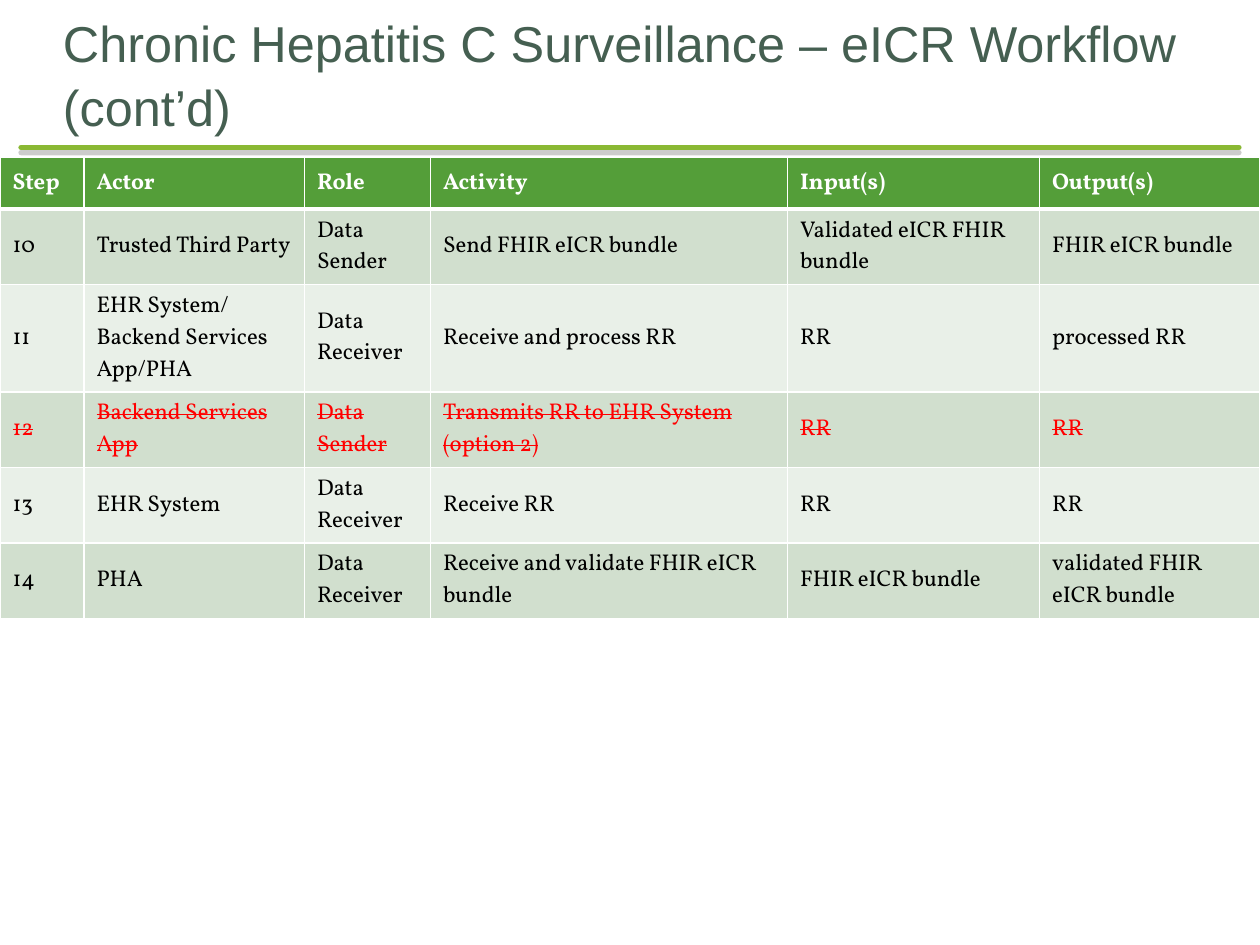
from dataclasses import dataclass

from lxml.etree import SubElement as Sub
from pptx import Presentation
from pptx.dml.color import RGBColor as Rgb
from pptx.enum.shapes import MSO_CONNECTOR as Link
from pptx.enum.text import MSO_ANCHOR as Anchor
from pptx.oxml.ns import qn
from pptx.util import Inches, Pt


@dataclass(frozen=True)
class Theme:
    title: str = "455F51"
    rule: str = "8AB833"
    shade: str = "808080"
    head: str = "549E39"
    bands: tuple = ("D1DFCE", "E9F0E8")
    white: str = "FFFFFF"
    ink: str = "000000"
    struck: str = "FF0000"
    title_font: str = "Arial"
    body_font: str = "Vollkorn"
    title_size: float = 28.8
    body_size: float = 13


# Grid: 120 columns and 750 rows over the slide
COLS, ROWS = 120, 750
WIDTHS = [8, 21, 12, 34, 24, 21]
HEIGHTS = [41, 60, 85, 60, 60, 60]
STRUCK = "12"
STEPS = [
    ["Step", "Actor", "Role", "Activity", "Input(s)", "Output(s)"],
    ["10", "Trusted Third Party", "Data Sender", "Send FHIR eICR bundle",
     "Validated eICR FHIR bundle", "FHIR eICR bundle"],
    ["11", "EHR System/ Backend Services App/PHA", "Data Receiver",
     "Receive and process RR", "RR", "processed RR"],
    [STRUCK, "Backend Services App", "Data Sender",
     "Transmits RR to EHR System (option 2)", "RR", "RR"],
    ["13", "EHR System", "Data Receiver", "Receive RR", "RR", "RR"],
    ["14", "PHA", "Data Receiver", "Receive and validate FHIR eICR bundle",
     "FHIR eICR bundle", "validated FHIR eICR bundle"],
]


class Deck:
    def __init__(self, theme):
        self.theme = theme
        self.prs = Presentation()
        self.prs.slide_width, self.prs.slide_height = Inches(10), Inches(7.5)
        self.slide = self.prs.slides.add_slide(self.prs.slide_layouts[6])

    def across(self, n):
        return round(self.prs.slide_width * n / COLS)

    def down(self, n):
        return round(self.prs.slide_height * n / ROWS)

    def label(self, frame, text, color, struck=False, **form):
        run = frame.paragraphs[0].add_run()
        run.text = text
        for key, value in form.items():
            setattr(run.font, key, value)
        run.font.color.rgb = Rgb.from_string(color)
        if struck:
            run._r.get_or_add_rPr().set("strike", "sngStrike")

    def title(self, text, x, y, w, h):
        box = self.slide.shapes.add_textbox(
            self.across(x), self.down(y), self.across(w), self.down(h))
        frame = box.text_frame
        form = {"word_wrap": True, "vertical_anchor": Anchor.BOTTOM,
                "margin_left": 0, "margin_top": Inches(0.05),
                "margin_right": 0, "margin_bottom": 0}
        for key, value in form.items():
            setattr(frame, key, value)
        frame.paragraphs[0].line_spacing = 1.05
        look = self.theme
        self.label(frame, text, look.title, name=look.title_font,
                   size=Pt(look.title_size))

    def rule(self, x, y, end):
        line = self.slide.shapes.add_connector(
            Link.STRAIGHT, self.across(x), self.down(y),
            self.across(end), self.down(y))
        line.line.width = Pt(3)
        line.line.color.rgb = Rgb.from_string(self.theme.rule)
        props = line._element.spPr
        props.find(qn("a:ln")).set("cap", "rnd")
        # Shadow straight below the line
        cast = Sub(Sub(props, qn("a:effectLst")), qn("a:outerShdw"),
                   blurRad="0", dist=str(Pt(3)), dir="5400000")
        tint = Sub(cast, qn("a:srgbClr"), val=self.theme.shade)
        Sub(tint, qn("a:alpha"), val="40000")

    def edges(self, cell, row):
        props = cell._tc.get_or_add_tcPr()
        sizes = {"L": 1, "R": 1, "T": 3 if row == 1 else 1,
                 "B": 3 if row == 0 else 1}
        for side, size in sizes.items():
            edge = Sub(props, qn("a:ln" + side), w=str(Pt(size)))
            Sub(Sub(edge, qn("a:solidFill")), qn("a:srgbClr"),
                val=self.theme.white)

    def table(self, data, x, y):
        look = self.theme
        grid = self.slide.shapes.add_table(
            len(data), len(WIDTHS), self.across(x), self.down(y),
            self.across(sum(WIDTHS)), self.down(sum(HEIGHTS))).table
        for col, width in zip(grid.columns, WIDTHS):
            col.width = self.across(width)
        for r, (line, height) in enumerate(zip(data, HEIGHTS)):
            grid.rows[r].height = self.down(height)
            head, struck = r == 0, line[0] == STRUCK
            fill = look.head if head else look.bands[(r - 1) % 2]
            color = (look.white if head else
                     look.struck if struck else look.ink)
            for c, text in enumerate(line):
                cell = grid.cell(r, c)
                cell.vertical_anchor = Anchor.MIDDLE
                self.edges(cell, r)
                cell.fill.solid()
                cell.fill.fore_color.rgb = Rgb.from_string(fill)
                self.label(cell.text_frame, text, color, struck, bold=head,
                           name=look.body_font, size=Pt(look.body_size))


def main():
    deck = Deck(Theme())
    # Heading and its rule
    deck.rule(2, 117, 118)
    deck.title("Chronic Hepatitis C Surveillance – eICR Workflow (cont’d)",
               6, 50, 108, 58)
    # Workflow steps
    deck.table(STEPS, 0, 125)
    deck.prs.save("out.pptx")


if __name__ == "__main__":
    main()
